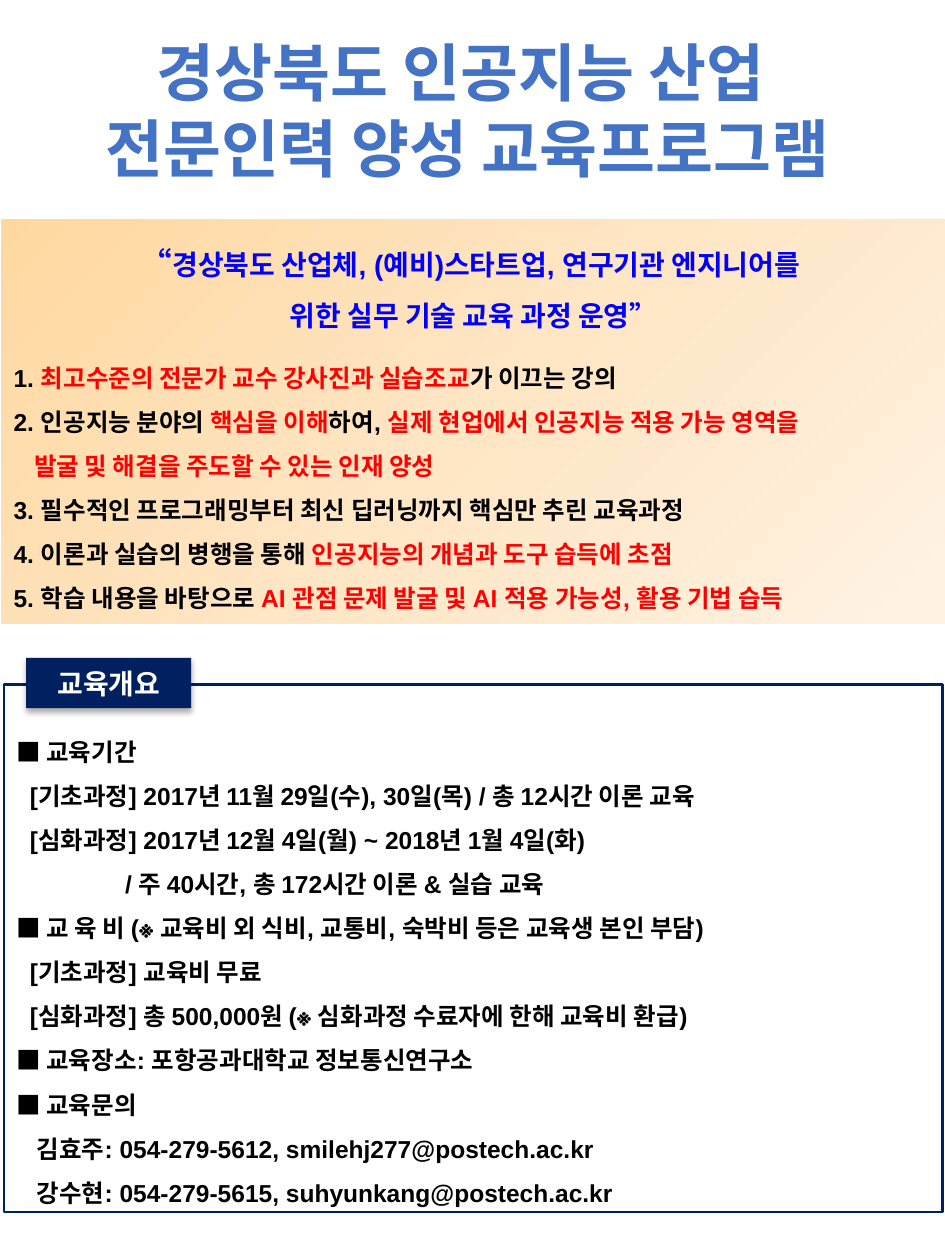
import pptx
import pptx.util
import pptx.dml.color
import pptx.enum.shapes
import pptx.enum.text
import pptx.oxml
import pptx.oxml.ns
from dataclasses import dataclass
from lxml import etree

Pt = pptx.util.Pt
RGBColor = pptx.dml.color.RGBColor
CENTER = pptx.enum.text.PP_ALIGN.CENTER
ANCHOR = pptx.enum.text.MSO_ANCHOR
RECTANGLE = pptx.enum.shapes.MSO_SHAPE.RECTANGLE
qn = pptx.oxml.ns.qn
NAMESPACE = pptx.oxml.ns.nsdecls("a")


@dataclass(frozen=True)
class Theme:
    latin: str = "Arial"
    korean: str = "Noto Sans CJK KR"
    title: str = "4472C4"
    navy: str = "002060"
    white: str = "FFFFFF"
    black: str = "000000"
    red: str = "FF0000"
    blue: str = "0000FF"
    gradient: tuple = ((0, "FFD8A0"), (50, "FFE6C5"), (100, "FFF2E3"))
    title_size: int = 36
    quote_size: int = 18
    heading_size: int = 16
    body_size: int = 14
    line_spacing: float = 1.5


THEME = Theme()
SUB, NAME, DEEP = 7.8, 11.7, 62.2  # left indents

FEATURES = [
    (0, [("1. ", THEME.black), ("최고수준의 전문가 교수 강사진과 실습조교", THEME.red),
         ("가 이끄는 강의", THEME.black)]),
    (0, [("2. 인공지능 분야의 ", THEME.black), ("핵심을 이해", THEME.red), ("하여, ", THEME.black),
         ("실제 현업에서 인공지능 적용 가능 영역을", THEME.red)]),
    (NAME, [("발굴 및 해결을 주도할 수 있는 인재 양성", THEME.red)]),
    (0, [("3. 필수적인 프로그래밍부터 최신 딥러닝까지 핵심만 추린 교육과정", THEME.black)]),
    (0, [("4. 이론과 실습의 병행을 통해 ", THEME.black),
         ("인공지능의 개념과 도구 습득에 초점", THEME.red)]),
    (0, [("5. 학습 내용을 바탕으로 ", THEME.black),
         ("AI 관점 문제 발굴 및 AI 적용 가능성, 활용 기법 습득", THEME.red)]),
]

OVERVIEW = [
    (0, "■ 교육기간"),
    (SUB, "[기초과정] 2017년 11월 29일(수), 30일(목) / 총 12시간 이론 교육"),
    (SUB, "[심화과정] 2017년 12월 4일(월) ~ 2018년 1월 4일(화)"),
    (DEEP, "/ 주 40시간, 총 172시간 이론 & 실습 교육"),
    (0, "■ 교 육 비 (※ 교육비 외 식비, 교통비, 숙박비 등은 교육생 본인 부담)"),
    (SUB, "[기초과정] 교육비 무료"),
    (SUB, "[심화과정] 총 500,000원 (※ 심화과정 수료자에 한해 교육비 환급)"),
    (0, "■ 교육장소: 포항공과대학교 정보통신연구소"),
    (0, "■ 교육문의"),
    (NAME, "김효주: 054-279-5612, smilehj277@postech.ac.kr"),
    (NAME, "강수현: 054-279-5615, suhyunkang@postech.ac.kr"),
]


def apply_format(target, values):
    for name, value in values.items():
        setattr(target, name, value)


def add_box(slide, box, fill=None, line=None):
    shape = slide.shapes.add_shape(RECTANGLE, *(Pt(length) for length in box))
    shape.shadow.inherit = False
    if fill:
        shape.fill.solid()
        shape.fill.fore_color.rgb = RGBColor.from_string(fill)
    if line:
        shape.line.color.rgb = RGBColor.from_string(line)
        shape.line.width = Pt(1.5)
    else:
        shape.line.fill.background()
    apply_format(shape.text_frame, {"word_wrap": True, "vertical_anchor": ANCHOR.TOP})
    return shape


def add_paragraph(frame, runs, alignment=None, indent=0, **values):
    """Each run is (text, color, size, latin font); the first paragraph is reused."""
    first = frame.paragraphs[0]
    paragraph = frame.add_paragraph() if first.runs else first
    paragraph.alignment = alignment or pptx.enum.text.PP_ALIGN.LEFT
    apply_format(paragraph, values)
    if indent:
        paragraph._p.get_or_add_pPr().set("marL", str(Pt(indent)))
    for text, color, size, latin in runs:
        run = paragraph.add_run()
        run.text = text
        run.font.color.rgb = RGBColor.from_string(color)
        apply_format(run.font, {"size": Pt(size), "bold": True, "name": latin})
        east_asian = etree.SubElement(run.font._element, qn("a:ea"))
        east_asian.set("typeface", THEME.korean)
    return paragraph


def add_title(slide, box):
    text_box = slide.shapes.add_textbox(*(Pt(length) for length in box))
    frame = text_box.text_frame
    frame.word_wrap = True
    for text in ("경상북도 인공지능 산업 ", "전문인력 양성 교육프로그램"):
        run = (text, THEME.title, THEME.title_size, THEME.korean)
        paragraph = add_paragraph(frame, [run], CENTER)
        outline = pptx.oxml.parse_xml(
            f'<a:ln {NAMESPACE} w="{Pt(0.75)}"><a:solidFill>'
            f'<a:srgbClr val="{THEME.white}"/></a:solidFill></a:ln>')
        paragraph.runs[0].font._element.insert(0, outline)


def add_features(slide, box):
    shape = add_box(slide, box, THEME.white)
    # Three-stop diagonal gradient
    stops = "".join(f'<a:gs pos="{position * 1000}"><a:srgbClr val="{color}"/></a:gs>'
                    for position, color in THEME.gradient)
    gradient = pptx.oxml.parse_xml(
        f'<a:gradFill {NAMESPACE}><a:gsLst>{stops}</a:gsLst>'
        f'<a:lin ang="{45 * 60000}" scaled="0"/></a:gradFill>')
    properties = shape._element.spPr
    properties.replace(properties.find(qn("a:solidFill")), gradient)

    # Quotation, then the numbered points
    frame, spacing = shape.text_frame, THEME.line_spacing
    add_paragraph(frame, [
        ("“", THEME.blue, THEME.quote_size, THEME.latin),
        ("경상북도 산업체, (예비)스타트업, 연구기관 엔지니어를 ", THEME.blue,
         THEME.heading_size, THEME.latin)], CENTER, line_spacing=spacing)
    add_paragraph(frame, [("위한 실무 기술 교육 과정 운영”", THEME.blue,
                           THEME.heading_size, THEME.latin)], CENTER, line_spacing=spacing)
    for index, (indent, parts) in enumerate(FEATURES):
        runs = [(text, color, THEME.body_size, THEME.latin) for text, color in parts]
        add_paragraph(frame, runs, indent=indent, line_spacing=spacing,
                      space_before=Pt(0 if index else 9))


def add_overview(slide, box):
    frame = add_box(slide, box, THEME.white, THEME.navy).text_frame
    frame.margin_top = Pt(21.6)
    for indent, text in OVERVIEW:
        add_paragraph(frame, [(text, THEME.black, THEME.body_size, THEME.latin)],
                      indent=indent, line_spacing=THEME.line_spacing)


def add_label(slide, box):
    shape = add_box(slide, box, THEME.navy)
    shape.text_frame.vertical_anchor = ANCHOR.MIDDLE
    add_paragraph(shape.text_frame,
                  [("교육개요", THEME.white, THEME.heading_size, THEME.latin)], CENTER)
    # Soft shadow below the label
    effects = shape._element.spPr.find(qn("a:effectLst"))
    effects.append(pptx.oxml.parse_xml(
        f'<a:outerShdw {NAMESPACE} blurRad="{Pt(3.5)}" dist="{Pt(2.2)}" dir="{90 * 60000}" '
        f'rotWithShape="0"><a:srgbClr val="{THEME.black}"><a:alpha val="32000"/>'
        f'</a:srgbClr></a:outerShdw>'))


def main():
    presentation = pptx.Presentation()
    apply_format(presentation, {"slide_width": Pt(540), "slide_height": Pt(720)})
    slide = presentation.slides.add_slide(presentation.slide_layouts[6])
    add_overview(slide, (2.2, 391, 536.4, 301.7))
    add_features(slide, (0.7, 125.3, 540, 231.1))
    add_title(slide, (-24.5, 15.8, 583.2, 94.3))
    add_label(slide, (15, 375.9, 94.3, 28.8))
    presentation.save("out.pptx")


if __name__ == "__main__":
    main()
